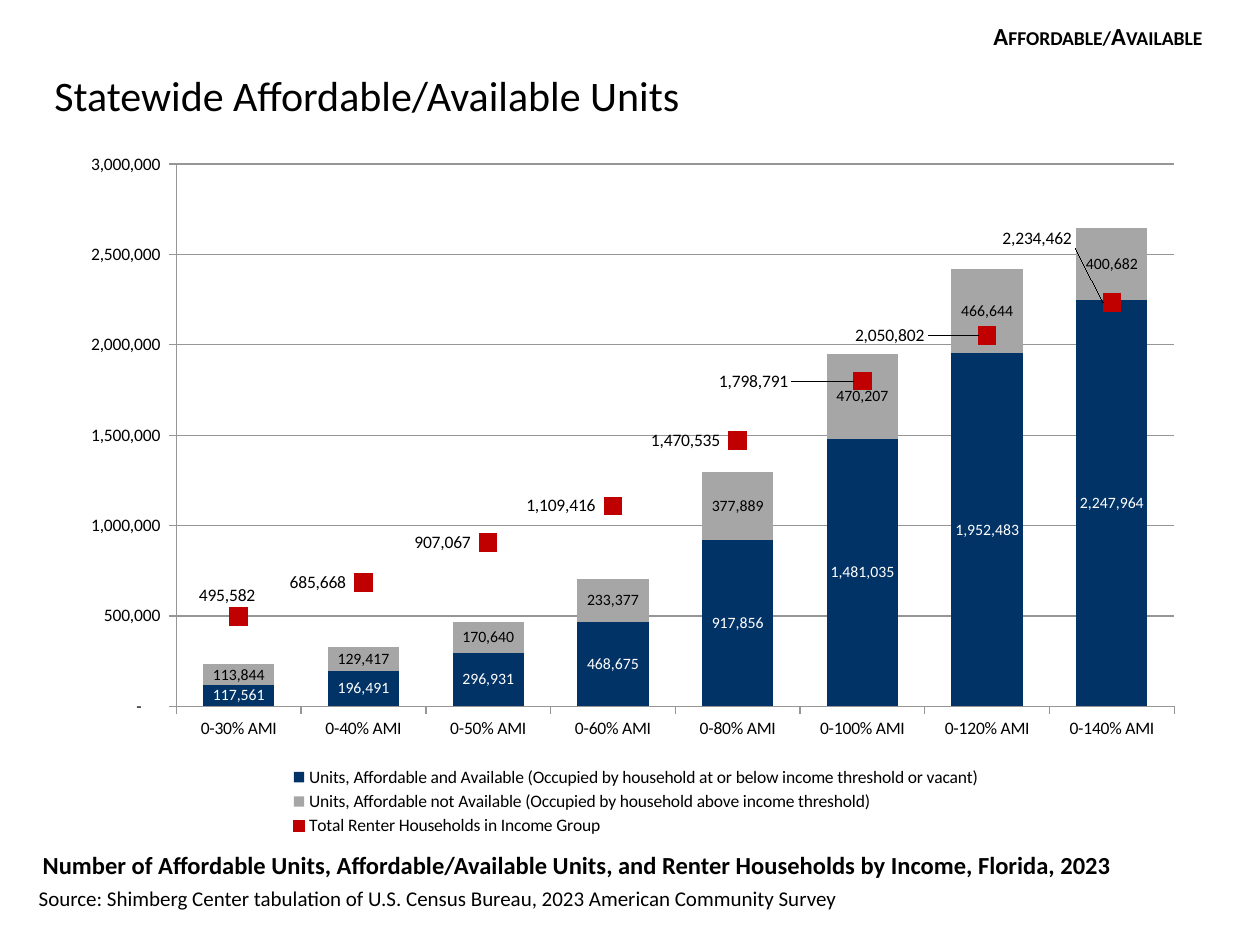
"""Build the statewide affordable and available units slide."""
from dataclasses import dataclass
from typing import NamedTuple, Optional

from pptx import Presentation
from pptx.chart.chart import Chart
from pptx.chart.data import CategoryChartData
from pptx.dml.color import RGBColor
from pptx.enum.chart import XL_CHART_TYPE as ChartType
from pptx.enum.chart import XL_LABEL_POSITION as LabelPosition
from pptx.enum.chart import XL_LEGEND_POSITION as LegendPosition
from pptx.enum.chart import XL_MARKER_STYLE as MarkerStyle
from pptx.enum.chart import XL_TICK_MARK as TickMark
from pptx.enum.text import MSO_ANCHOR as Anchor
from pptx.enum.text import MSO_AUTO_SIZE as AutoSize
from pptx.enum.text import PP_ALIGN as Align
from pptx.oxml import parse_xml
from pptx.oxml.ns import nsdecls
from pptx.slide import Slide
from pptx.util import Cm, Pt


@dataclass(frozen=True)
class Theme:
    """Colours, type sizes and number format of the slide."""
    font: str = "Calibri"
    ink: RGBColor = RGBColor(0, 0, 0)
    paper: RGBColor = RGBColor(255, 255, 255)
    available: RGBColor = RGBColor(0x02, 0x33, 0x66)
    occupied: RGBColor = RGBColor(0xA6, 0xA6, 0xA6)
    households: RGBColor = RGBColor(0xC0, 0, 0)
    rule: RGBColor = RGBColor(0x96, 0x96, 0x96)
    title_size: int = 24
    heading_size: int = 14
    source_size: int = 12
    chart_size: int = 10
    bar_label_size: int = 9
    number: str = '_(* #,##0_);_(* \\(#,##0\\);_(* "-"??_);_('


THEME = Theme()


class Box(NamedTuple):
    """Position and size in centimetres."""
    left: float
    top: float
    width: float
    height: float

    def lengths(self) -> list:
        """Return the four values as lengths."""
        return [Cm(value) for value in self]


@dataclass(frozen=True)
class Note:
    """A single line of text beside the chart."""
    text: str
    box: Box
    size: int
    bold: bool = False
    small_caps: bool = False
    align: Align = Align.LEFT
    wrap: bool = True
    before: int = 0
    after: int = 0


@dataclass(frozen=True)
class Measure:
    """One row of values across the income groups."""
    name: str
    values: tuple
    color: RGBColor
    label_color: Optional[RGBColor] = None


TITLE = "Statewide Affordable/Available Units"
TITLE_BOX = Box(0.84, 0.84, 23.72, 1.7)
CHART_BOX = Box(1.27, 2.74, 22.86, 14.2)
NOTES = (
    Note("Number of Affordable Units, Affordable/Available Units, and Renter Households by Income, Florida, 2023",
         Box(0.61, 17.02, 23.52, 0.86), THEME.heading_size, bold=True, after=6),
    Note("Source: Shimberg Center tabulation of U.S. Census Bureau, 2023 American Community Survey",
         Box(0.53, 17.73, 24.36, 0.76), THEME.source_size),
    Note("Affordable/Available", Box(19.56, 0.3, 4.93, 0.86), THEME.heading_size,
         bold=True, small_caps=True, align=Align.RIGHT, wrap=False, before=6),
)
INCOME_LIMITS = (30, 40, 50, 60, 80, 100, 120, 140)
MEASURES = (
    Measure("Units, Affordable and Available (Occupied by household at or below income threshold or vacant)",
            (117561, 196491, 296931, 468675, 917856, 1481035, 1952483, 2247964),
            THEME.available, THEME.paper),
    Measure("Units, Affordable not Available (Occupied by household above income threshold)",
            (113844, 129417, 170640, 233377, 377889, 470207, 466644, 400682),
            THEME.occupied, THEME.ink),
    Measure("Total Renter Households in Income Group",
            (495582, 685668, 907067, 1109416, 1470535, 1798791, 2050802, 2234462),
            THEME.households),
)
LABEL_SHIFTS = {0: (0.03, -0.03), 5: (-0.05, 0), 6: (-0.04, 0), 7: (-0.02, -0.09)}


def add_run(paragraph, text: str, size: int, bold: bool = False):
    """Add a run in the theme font and return it."""
    run = paragraph.add_run()
    run.text = text
    run.font.name, run.font.size, run.font.bold = THEME.font, Pt(size), bold
    run.font.color.rgb = THEME.ink
    return run


def add_title(slide: Slide) -> None:
    """Move and fill the title placeholder."""
    title = slide.shapes.title
    title.left, title.top, title.width, title.height = TITLE_BOX.lengths()
    frame = title.text_frame
    frame.auto_size, frame.vertical_anchor = AutoSize.NONE, Anchor.BOTTOM
    frame.paragraphs[0].alignment = Align.LEFT
    add_run(frame.paragraphs[0], TITLE, THEME.title_size)


def add_note(slide: Slide, note: Note) -> None:
    """Add one line of text."""
    frame = slide.shapes.add_textbox(*note.box.lengths()).text_frame
    frame.word_wrap, frame.auto_size = note.wrap, AutoSize.SHAPE_TO_FIT_TEXT
    paragraph = frame.paragraphs[0]
    paragraph.alignment = note.align
    paragraph.space_before, paragraph.space_after = Pt(note.before), Pt(note.after)
    run = add_run(paragraph, note.text, note.size, note.bold)
    if note.small_caps:
        run.font._element.set("cap", "small")


def manual_layout(x: float, y: float, size: tuple = (), inner: bool = False, edge: bool = True):
    """Return a chart layout element in fractions of the chart."""
    parts = [("layoutTarget", "inner")] if inner else []
    parts += [("xMode", "edge"), ("yMode", "edge")] if edge else []
    parts += [("x", x), ("y", y), *zip("wh", size)]
    body = "".join(f'<c:{tag} val="{value}"/>' for tag, value in parts)
    return parse_xml(f'<c:layout {nsdecls("c")}><c:manualLayout>{body}</c:manualLayout></c:layout>')


def split_line_plot(chart: Chart) -> None:
    """Move the last series from the columns to a line plot on the same axes."""
    bars = chart._chartSpace.xpath(".//c:barChart")[0]
    households = bars.xpath("c:ser")[-1]
    for flag in households.xpath("c:invertIfNegative"):
        households.remove(flag)
    axes = "".join(f'<c:axId val="{axis.get("val")}"/>' for axis in bars.xpath("c:axId"))
    line = parse_xml(f'<c:lineChart {nsdecls("c")}><c:grouping val="standard"/>'
                     f'<c:varyColors val="0"/><c:marker val="1"/>{axes}</c:lineChart>')
    line.insert(2, households)
    bars.addnext(line)


def style_labels(labels, size: int, color: RGBColor) -> None:
    """Show values in the theme format."""
    labels.show_value = True
    labels.number_format, labels.number_format_is_linked = THEME.number, False
    labels.font.size, labels.font.name = Pt(size), THEME.font
    labels.font.color.rgb = color


def style_columns(plot) -> None:
    """Colour and label the stacked columns."""
    plot.gap_width, plot.overlap, plot.vary_by_categories = 75, 100, False
    for series, measure in zip(plot.series, MEASURES):
        series.format.fill.solid()
        series.format.fill.fore_color.rgb = measure.color
        style_labels(series.data_labels, THEME.bar_label_size, measure.label_color)


def style_households(series, color: RGBColor) -> None:
    """Show the households as square markers with placed labels."""
    series.smooth = False
    series.format.line.fill.background()
    marker = series.marker
    marker.style, marker.size = MarkerStyle.SQUARE, 10
    marker.format.fill.solid()
    marker.format.fill.fore_color.rgb = color
    marker.format.line.color.rgb = color
    style_labels(series.data_labels, THEME.chart_size, THEME.ink)
    series.data_labels.position = LabelPosition.LEFT
    for index, shift in LABEL_SHIFTS.items():
        series.points[index].data_label.position = LabelPosition.LEFT
        label_index = series._element.xpath(f"c:dLbls/c:dLbl/c:idx[@val='{index}']")[0]
        label_index.addnext(manual_layout(*shift, edge=False))


def style_frame(chart: Chart) -> None:
    """Format the axes, the legend and the plot area."""
    chart.has_title = False
    chart.font.name, chart.font.size = THEME.font, Pt(THEME.chart_size)
    chart.font.color.rgb = THEME.ink
    for axis in (chart.category_axis, chart.value_axis):
        axis.major_tick_mark, axis.minor_tick_mark = TickMark.OUTSIDE, TickMark.NONE
        axis.format.line.color.rgb = THEME.rule
    scale = chart.value_axis
    scale.minimum_scale, scale.maximum_scale, scale.major_unit = 0, 3000000, 500000
    scale.tick_labels.number_format = THEME.number
    scale.tick_labels.number_format_is_linked = False
    scale.major_gridlines.format.line.color.rgb = THEME.rule
    chart.has_legend = True
    legend = chart.legend
    legend.position, legend.include_in_layout = LegendPosition.BOTTOM, False
    for old in chart._chartSpace.xpath(".//c:plotArea/c:layout | .//c:legend/c:layout"):
        old.getparent().remove(old)
    legend._element.xpath("c:legendPos")[0].addnext(manual_layout(0.19, 0.89, (0.63, 0.11)))
    plot_area = chart._chartSpace.xpath(".//c:plotArea")[0]
    plot_area.insert(0, manual_layout(0.1, 0.04, (0.88, 0.77), inner=True))


def add_units_chart(slide: Slide) -> None:
    """Add the combined column and marker chart."""
    data = CategoryChartData(number_format=THEME.number)
    data.categories = [f"0-{limit}% AMI" for limit in INCOME_LIMITS]
    for measure in MEASURES:
        data.add_series(measure.name, measure.values)
    chart = slide.shapes.add_chart(ChartType.COLUMN_STACKED, *CHART_BOX.lengths(), data).chart
    split_line_plot(chart)
    columns, line = chart.plots
    style_frame(chart)
    style_columns(columns)
    style_households(line.series[0], MEASURES[-1].color)


def main() -> None:
    """Build and save the slide."""
    deck = Presentation()
    deck.slide_width, deck.slide_height = Cm(25.4), Cm(19.05)
    slide = deck.slides.add_slide(deck.slide_layouts[5])
    add_title(slide)
    for note in NOTES:
        add_note(slide, note)
    add_units_chart(slide)
    deck.save("out.pptx")


if __name__ == "__main__":
    main()
